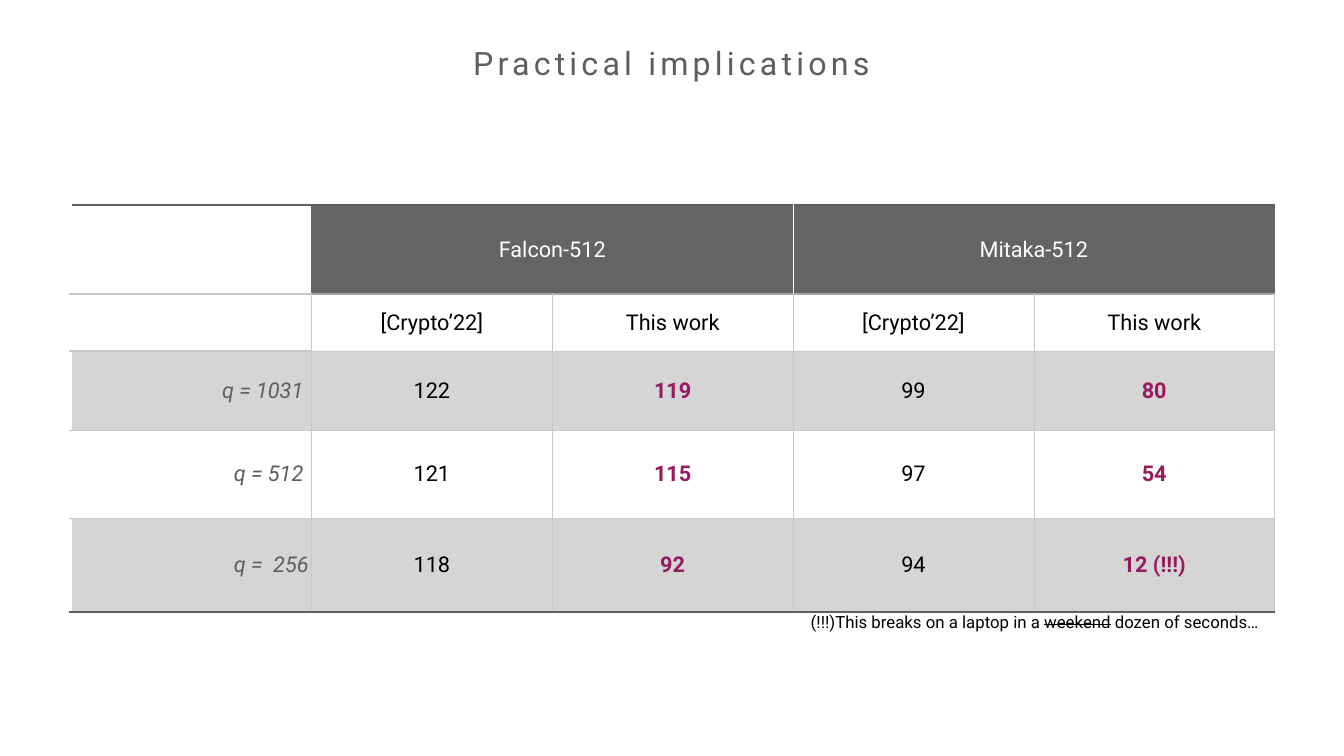
from lxml import etree
from pptx import Presentation
from pptx.dml.color import RGBColor
from pptx.enum.text import MSO_ANCHOR, PP_ALIGN
from pptx.oxml.ns import qn
from pptx.util import Pt

MID = MSO_ANCHOR.MIDDLE
LEFT, MIDDLE, RIGHT = PP_ALIGN.LEFT, PP_ALIGN.CENTER, PP_ALIGN.RIGHT
FONT = "Roboto"
INSET = Pt(4)
TITLE_ONLY = 5

COLORS = {
    "white": "FFFFFF", "black": "000000", "gray": "5E5E5E", "head": "646464",
    "band": "D5D5D5", "rule": "C8C8C8", "dark": "A9A9A9", "wine": "981A5E",
}

HEIGHTS = [127.4, 81.4, 113, 126, 133.9]
ROWS = [
    ["", "Falcon-512", "", "Mitaka-512", ""],
    ["", "[Crypto’22]", "This work", "[Crypto’22]", "This work"],
    ["q = 1031 ", "122", "119", "99", "80"],
    ["q = 512 ", "121", "115", "97", "54"],
    ["q =  256", "118", "92", "94", "12 (!!!)"],
]


def style(para, size, color, align=MIDDLE, bold=False, italic=False):
    para.alignment = align
    font = para.font
    font.name, font.size = FONT, Pt(size)
    font.bold, font.italic = bold, italic
    font.color.rgb = RGBColor.from_string(COLORS[color])


def set_frame(frame):
    frame.word_wrap = False
    frame.vertical_anchor = MID
    frame.margin_left = frame.margin_right = INSET
    frame.margin_top = frame.margin_bottom = INSET


def add_border(cell, edges):
    """Draw the left, right, top and bottom edges, each a (color, width)."""
    props = cell._tc.get_or_add_tcPr()
    for i, (side, (color, width)) in enumerate(zip("LRTB", edges)):
        line = etree.Element(qn(f"a:ln{side}"), w=str(Pt(width)))
        fill = etree.SubElement(line, qn("a:solidFill"))
        etree.SubElement(fill, qn("a:srgbClr"), val=COLORS[color])
        props.insert(i, line)


def get_edges(row, col):
    """Return the four edges of the cell, the same on both sides of a line."""
    thin, thick = ("rule", 1), ("gray", 4)
    last = len(ROWS) - 1
    # Lines above each row, then the one below the last
    lines = [thick, ("dark", 3) if col else ("rule", 3),
             thin if col else ("rule", 3), thin, thin, thick]
    left = right = thin
    if row == 0:
        left = right = ("head", 1) if col else ("white", 1)
        if col == 2:
            right = ("white", 1)
        if col == 3:
            left = ("white", 1)
        if col == 0:
            right = ("head", 1)
        if col == 1:
            left = ("head", 1)
    if col == 0:
        left = ("white", 4)
    return left, right, lines[row], lines[min(row, last) + 1]


def style_cell(cell, row, col):
    head, band = row == 0 and col > 0, row in (2, 4)
    fill = "head" if head else "band" if band else "white"
    cell.fill.solid()
    cell.fill.fore_color.rgb = RGBColor.from_string(COLORS[fill])
    cell.vertical_anchor = MID
    cell.margin_left = cell.margin_right = INSET
    cell.margin_top = cell.margin_bottom = INSET
    add_border(cell, get_edges(row, col))

    para = cell.text_frame.paragraphs[0]
    ours = row > 1 and col in (2, 4)
    color = "white" if head else "wine" if ours else "black" if col else "gray"
    style(para, 31, color, MIDDLE if col else RIGHT, ours, col == 0)


def add_title(slide, x, y, w, h):
    title = slide.shapes.title
    title.left, title.top, title.width, title.height = Pt(x), Pt(y), Pt(w), Pt(h)
    set_frame(title.text_frame)
    para = title.text_frame.paragraphs[0]
    run = para.add_run()
    run.text = "Practical implications"
    style(para, 46, "gray")
    run._r.get_or_add_rPr().set("spc", "600")


def add_grid(slide, x, y, w):
    count = len(ROWS[0])
    table = slide.shapes.add_table(
        len(ROWS), count, Pt(x), Pt(y), Pt(w), Pt(sum(HEIGHTS))).table
    table.first_row = table.horz_banding = False
    for col in table.columns:
        col.width = Pt(w / count)
    for r, (texts, height) in enumerate(zip(ROWS, HEIGHTS)):
        table.rows[r].height = Pt(height)
        for c, text in enumerate(texts):
            cell = table.cell(r, c)
            if text:
                cell.text = text
            style_cell(cell, r, c)
    # Each scheme spans two columns
    for c in (1, 3):
        table.cell(0, c).merge(table.cell(0, c + 1))


def add_note(slide, x, y, w, h):
    frame = slide.shapes.add_textbox(Pt(x), Pt(y), Pt(w), Pt(h)).text_frame
    set_frame(frame)
    para = frame.paragraphs[0]
    style(para, 24, "black")
    parts = ["(!!!)This breaks on a laptop in a ", "weekend", " dozen of seconds…"]
    runs = [para.add_run() for _ in parts]
    for run, text in zip(runs, parts):
        run.text = text
    runs[1]._r.get_or_add_rPr().set("strike", "sngStrike")


def main():
    prs = Presentation()
    prs.slide_width, prs.slide_height = Pt(1920), Pt(1080)
    slide = prs.slides.add_slide(prs.slide_layouts[TITLE_ONLY])
    add_title(slide, 650, 55.5, 619, 68.5)
    add_grid(slide, 101, 293, 1720)
    add_note(slide, 1137, 869, 682, 39)
    prs.save("out.pptx")


if __name__ == "__main__":
    main()
